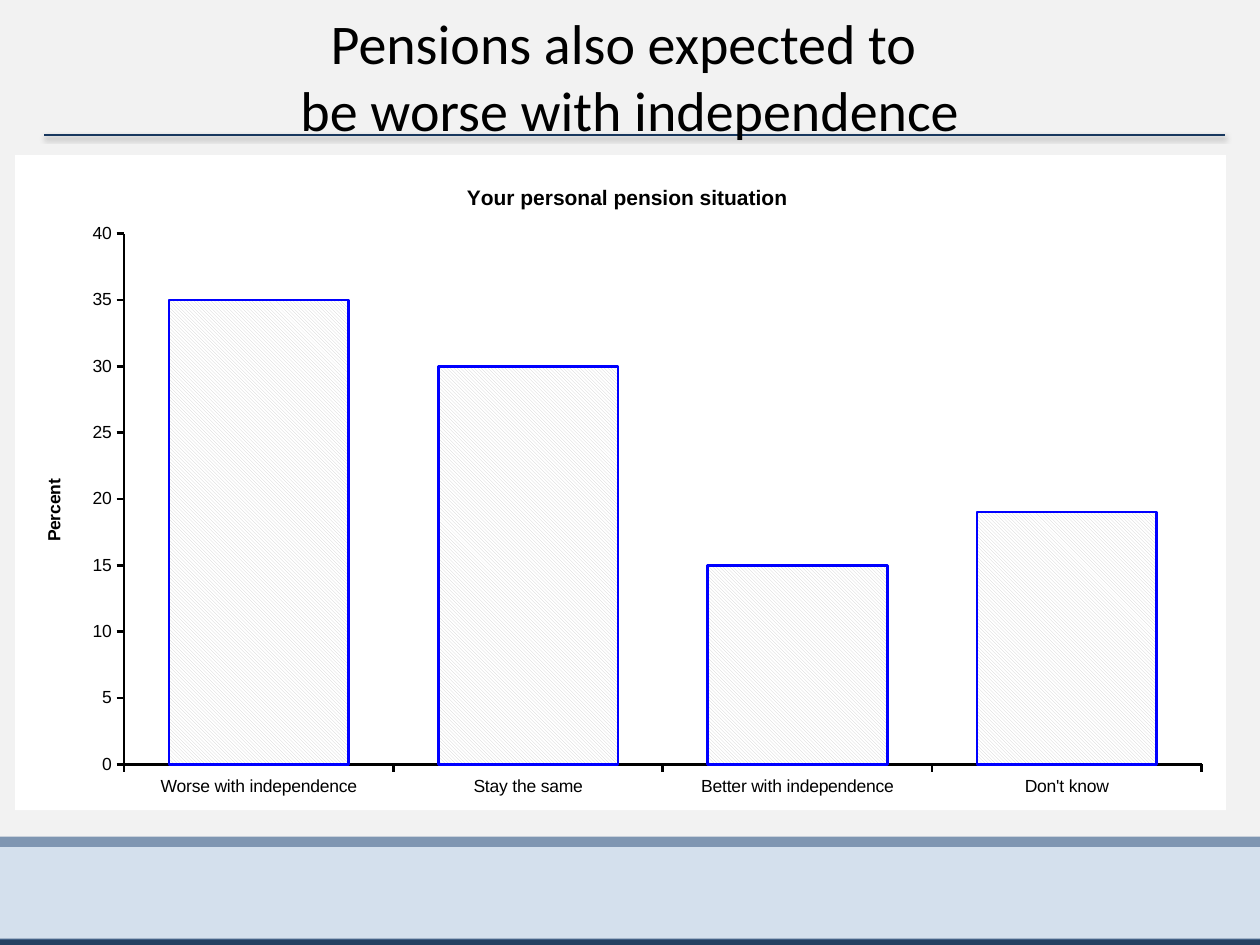
"""Build a slide with a column chart of expected pension changes."""
import pptx
import pptx.chart.data
import pptx.dml.color
import pptx.enum.chart
import pptx.enum.dml
import pptx.enum.shapes
import pptx.enum.text
import pptx.oxml
import pptx.oxml.ns
import pptx.util

Pt = pptx.util.Pt
Color = pptx.dml.color.RGBColor
Chart = pptx.enum.chart
qn = pptx.oxml.ns.qn

BLACK = Color(0x00, 0x00, 0x00)
WHITE = Color(0xFF, 0xFF, 0xFF)
PAGE_GREY = Color(0xF2, 0xF2, 0xF2)
HATCH_GREY = Color(0xD0, 0xD0, 0xD0)
BAR_BLUE = Color(0x00, 0x00, 0xFF)
NAVY = Color(0x25, 0x40, 0x61)
RULE_NAVY = Color(0x17, 0x37, 0x5E)
STRIP_BLUE = Color(0x1F, 0x49, 0x7D)
FOOTER_BLUE = Color(0x8E, 0xB4, 0xE3)

HEADING = "Pensions also expected to \vbe worse with independence"
CHART_TITLE = "Your personal pension situation"
AXIS_TITLE = "Percent"
ANSWERS = {
    "Worse with independence": 35,
    "Stay the same": 30,
    "Better with independence": 15,
    "Don't know": 19,
}
BANDS = [(536.4, 3.6, NAVY, 100), (478.1, 5.8, STRIP_BLUE, 54), (483.9, 53.2, FOOTER_BLUE, 29)]
WIDTH, HEIGHT = 720, 540
NAMESPACES = pptx.oxml.ns.nsdecls("a", "c")
SHADOW = (
    f'<a:effectLst {NAMESPACES}><a:outerShdw blurRad="{Pt(3.1)}" dist="{Pt(1.6)}" dir="5400000">'
    '<a:srgbClr val="000000"><a:alpha val="38000"/></a:srgbClr></a:outerShdw></a:effectLst>'
)


def apply(target, **values):
    for name, value in values.items():
        setattr(target, name, value)


def set_font(font, size, family="Arial", bold=False):
    apply(font, size=Pt(size), name=family, bold=bold)
    font.color.rgb = BLACK


def set_line(line, color, width):
    line.color.rgb = color
    line.width = Pt(width)


def add_band(page, top, height, color, opacity):
    band = page.shapes.add_shape(
        pptx.enum.shapes.MSO_SHAPE.RECTANGLE, 0, Pt(top), Pt(WIDTH), Pt(height))
    band.shadow.inherit = False
    band.fill.solid()
    band.fill.fore_color.rgb = color
    band.line.fill.background()
    if opacity < 100:
        fill_color = band.fill._xPr.find(".//" + qn("a:srgbClr"))
        fill_color.append(pptx.oxml.parse_xml(
            f'<a:alpha {NAMESPACES} val="{opacity * 1000}"/>'))


def add_heading(page):
    rule = page.shapes.add_connector(
        pptx.enum.shapes.MSO_CONNECTOR.STRAIGHT, Pt(25.2), Pt(77), Pt(700), Pt(77))
    set_line(rule.line, RULE_NAVY, 1)
    rule._element.spPr.append(pptx.oxml.parse_xml(SHADOW))
    box = page.shapes.add_textbox(Pt(8.6), Pt(9.4), Pt(702.8), Pt(67.7))
    apply(box.text_frame, word_wrap=True, vertical_anchor=pptx.enum.text.MSO_ANCHOR.MIDDLE)
    para = box.text_frame.paragraphs[0]
    para.text = HEADING
    para.alignment = pptx.enum.text.PP_ALIGN.CENTER
    for span in para.runs:
        set_font(span.font, 32, "Calibri")


def set_layout(element, index, inner=False, **places):
    for old in element.findall(qn("c:layout")):
        element.remove(old)
    target = '<c:layoutTarget val="inner"/>' if inner else ""
    modes = '<c:xMode val="edge"/><c:yMode val="edge"/>'
    values = "".join(f'<c:{name} val="{value}"/>' for name, value in places.items())
    element.insert(index, pptx.oxml.parse_xml(
        f"<c:layout {NAMESPACES}><c:manualLayout>{target}{modes}{values}"
        "</c:manualLayout></c:layout>"))


def set_title(owner, words, size, x, y):
    owner.has_title = True
    title = owner.chart_title if hasattr(owner, "chart_title") else owner.axis_title
    title.text_frame.text = words
    set_font(title.text_frame.paragraphs[0].runs[0].font, size, bold=True)
    set_layout(title._element, 1, x=x, y=y)


def white_background():
    return pptx.oxml.parse_xml(
        f'<c:spPr {NAMESPACES}><a:solidFill><a:srgbClr val="{WHITE}"/></a:solidFill>'
        "<a:ln><a:noFill/></a:ln></c:spPr>")


def add_pension_chart(page):
    data = pptx.chart.data.CategoryChartData()
    data.categories = list(ANSWERS)
    data.add_series("Series 1", list(ANSWERS.values()))
    chart = page.shapes.add_chart(
        Chart.XL_CHART_TYPE.COLUMN_CLUSTERED,
        Pt(8.6), Pt(88.6), Pt(691.9), Pt(374.4), data).chart
    chart.has_legend = False
    set_font(chart.font, 10)
    set_title(chart, CHART_TITLE, 12, 0.37, 0.04)

    for axis in (chart.category_axis, chart.value_axis):
        apply(axis, has_major_gridlines=False, major_tick_mark=Chart.XL_TICK_MARK.OUTSIDE,
              minor_tick_mark=Chart.XL_TICK_MARK.NONE)
        set_line(axis.format.line, BLACK, 1.5)
        set_font(axis.tick_labels.font, 10)
    apply(chart.value_axis, minimum_scale=0, maximum_scale=40, major_unit=5)
    apply(chart.value_axis.tick_labels, number_format="0", number_format_is_linked=False)
    set_title(chart.value_axis, AXIS_TITLE, 10, 0.02, 0.49)

    plot = chart.plots[0]
    apply(plot, gap_width=50, vary_by_categories=False)
    bars = plot.series[0]
    bars.format.fill.patterned()
    bars.format.fill.pattern = pptx.enum.dml.MSO_PATTERN.DARK_DOWNWARD_DIAGONAL
    bars.format.fill.fore_color.rgb = HATCH_GREY
    bars.format.fill.back_color.rgb = WHITE
    set_line(bars.format.line, BAR_BLUE, 1.5)

    chart_space = chart._chartSpace
    chart_space.find(qn("c:txPr")).addprevious(white_background())
    plot_area = chart_space.chart.plotArea
    plot_area.append(white_background())
    set_layout(plot_area, 0, inner=True, x=0.09, y=0.12, w=0.89, h=0.81)


def main():
    deck = pptx.Presentation()
    apply(deck, slide_width=Pt(WIDTH), slide_height=Pt(HEIGHT))
    page = deck.slides.add_slide(deck.slide_layouts[6])
    page.background.fill.solid()
    page.background.fill.fore_color.rgb = PAGE_GREY
    for band in BANDS:
        add_band(page, *band)
    add_heading(page)
    add_pension_chart(page)
    deck.save("out.pptx")


if __name__ == "__main__":
    main()
